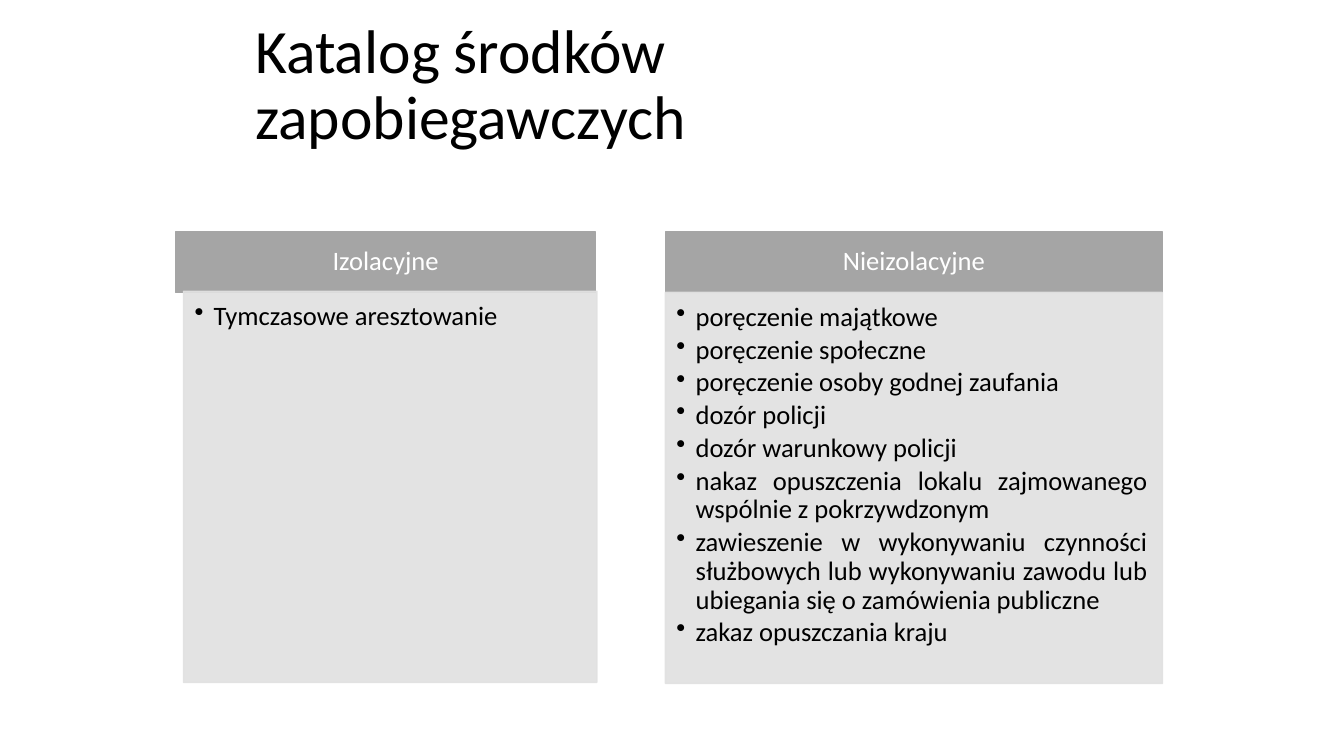
from dataclasses import dataclass

from lxml import etree
from pptx import Presentation
from pptx.dml.color import RGBColor
from pptx.enum.shapes import MSO_SHAPE
from pptx.enum.text import MSO_ANCHOR, MSO_AUTO_SIZE, PP_ALIGN
from pptx.oxml.ns import qn
from pptx.util import Inches, Pt

RECTANGLE = MSO_SHAPE.RECTANGLE
TOP, MIDDLE = MSO_ANCHOR.TOP, MSO_ANCHOR.MIDDLE
LEFT, CENTER, JUSTIFY = PP_ALIGN.LEFT, PP_ALIGN.CENTER, PP_ALIGN.JUSTIFY
NO_AUTOFIT = MSO_AUTO_SIZE.NONE

SLIDE_WIDTH, SLIDE_HEIGHT = Inches(13.33), Inches(7.5)
TITLE_ONLY = 5


@dataclass(frozen=True)
class Theme:
    font: str = "Calibri"
    ink: str = "000000"
    header_ink: str = "FFFFFF"
    header_fill: str = "A5A5A5"
    body_fill: str = "E1E1E1"
    body_opacity: int = 90
    title_size: float = 44
    text_size: float = 19
    line_spacing: float = 0.9
    item_gap: float = 2.85
    indent: float = 0.19


@dataclass(frozen=True)
class Area:
    """Position and size in percent of the slide."""

    left: float
    top: float
    width: float
    height: float

    def place(self, shape) -> None:
        shape.left = int(SLIDE_WIDTH * self.left / 100)
        shape.top = int(SLIDE_HEIGHT * self.top / 100)
        shape.width = int(SLIDE_WIDTH * self.width / 100)
        shape.height = int(SLIDE_HEIGHT * self.height / 100)


@dataclass(frozen=True)
class Column:
    heading: str
    items: tuple[str, ...]
    header: Area
    body: Area
    alignment: PP_ALIGN


THEME = Theme()
TITLE = "Katalog środków zapobiegawczych"
TITLE_AREA = Area(18.23, 0.53, 59.79, 21.87)
HEADER_INSETS = (0.15, 0.08, 0.15, 0.08)
BODY_INSETS = (0.11, 0.11, 0.15, 0.17)
COLUMNS = (
    Column(
        "Izolacyjne",
        ("Tymczasowe aresztowanie",),
        Area(13.05, 30.67, 31.28, 8),
        Area(13.65, 38.53, 30.76, 51.73),
        LEFT,
    ),
    Column(
        "Nieizolacyjne",
        (
            "poręczenie majątkowe",
            "poręczenie społeczne",
            "poręczenie osoby godnej zaufania",
            "dozór policji",
            "dozór warunkowy policji",
            "nakaz opuszczenia lokalu zajmowanego wspólnie z pokrzywdzonym",
            "zawieszenie w wykonywaniu czynności służbowych lub wykonywaniu "
            "zawodu lub ubiegania się o zamówienia publiczne",
            "zakaz opuszczania kraju",
        ),
        Area(49.51, 30.67, 36.98, 8),
        Area(49.51, 38.67, 36.98, 51.73),
        JUSTIFY,
    ),
)


def format_paragraph(para, size: float, color: str, alignment: PP_ALIGN) -> None:
    para.alignment = alignment
    para.line_spacing = THEME.line_spacing
    for span in para.runs:
        span.font.name = THEME.font
        span.font.size = Pt(size)
        span.font.color.rgb = RGBColor.from_string(color)


def add_bullet(para) -> None:
    para.space_after = Pt(THEME.item_gap)
    properties = para._p.get_or_add_pPr()
    properties.set("marL", str(Inches(THEME.indent)))
    properties.set("indent", str(-Inches(THEME.indent)))
    etree.SubElement(properties, qn("a:buChar")).set("char", "•")


def add_panel(page, area: Area, color: str, opacity: int,
              insets: tuple[float, ...], anchor: MSO_ANCHOR):
    box = page.shapes.add_shape(RECTANGLE, 0, 0, 0, 0)
    area.place(box)
    box.shadow.inherit = False
    box.line.width = Pt(1)
    for fill in (box.fill, box.line.fill):
        fill.solid()
        fill.fore_color.rgb = RGBColor.from_string(color)
    if opacity < 100:
        for tint in box._element.spPr.iter(qn("a:srgbClr")):
            etree.SubElement(tint, qn("a:alpha")).set("val", str(opacity * 1000))
    frame = box.text_frame
    frame.word_wrap = True
    frame.vertical_anchor = anchor
    (frame.margin_left, frame.margin_top,
     frame.margin_right, frame.margin_bottom) = map(Inches, insets)
    return frame


def add_column(page, column: Column) -> None:
    header = add_panel(page, column.header, THEME.header_fill, 100,
                       HEADER_INSETS, MIDDLE)
    header.text = column.heading
    format_paragraph(header.paragraphs[0], THEME.text_size, THEME.header_ink, CENTER)

    body = add_panel(page, column.body, THEME.body_fill, THEME.body_opacity,
                     BODY_INSETS, TOP)
    body.text = "\n".join(column.items)
    for para in body.paragraphs:
        format_paragraph(para, THEME.text_size, THEME.ink, column.alignment)
        add_bullet(para)


def add_title(page) -> None:
    title = page.shapes.title
    TITLE_AREA.place(title)
    frame = title.text_frame
    frame.text = TITLE
    frame.word_wrap = True
    frame.auto_size = NO_AUTOFIT
    frame.vertical_anchor = MIDDLE
    format_paragraph(frame.paragraphs[0], THEME.title_size, THEME.ink, LEFT)


def main() -> None:
    deck = Presentation()
    deck.slide_width, deck.slide_height = SLIDE_WIDTH, SLIDE_HEIGHT
    page = deck.slides.add_slide(deck.slide_layouts[TITLE_ONLY])
    add_title(page)
    for column in COLUMNS:
        add_column(page, column)
    deck.save("out.pptx")


if __name__ == "__main__":
    main()
